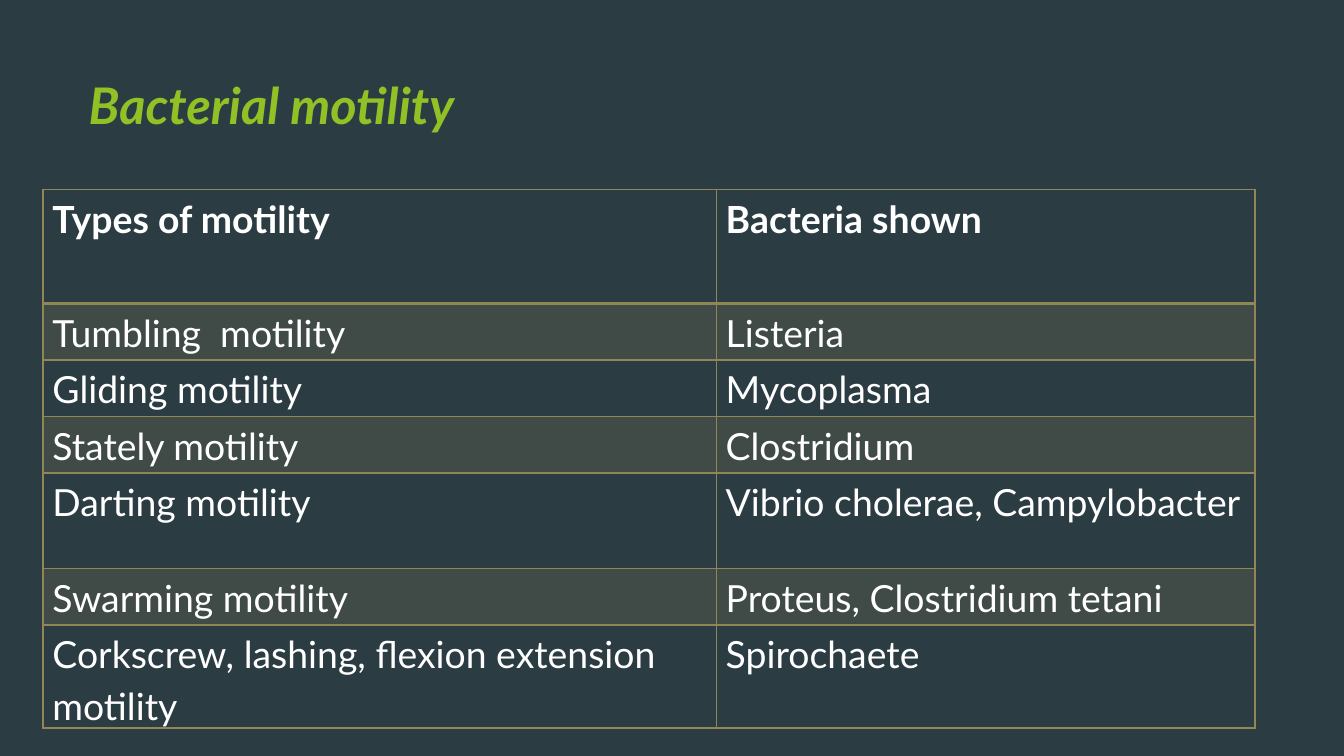
from dataclasses import dataclass

from lxml.etree import SubElement
from pptx import Presentation
from pptx.dml.color import RGBColor
from pptx.enum.text import MSO_ANCHOR, PP_ALIGN
from pptx.oxml import parse_xml
from pptx.oxml.ns import nsdecls, qn
from pptx.util import Inches, Pt

FONT = "Lato"
BACKGROUND, GREEN, WHITE, GOLD = "2C3C43", "90C226", "FFFFFF", "918655"
COLUMN_WIDTHS = (5.01, 4.01)


@dataclass(frozen=True)
class MotilityRow:
    motility: str
    bacteria: str
    height: float = 0.42
    header: bool = False
    shaded: bool = False


ROWS = (
    MotilityRow("Types of motility", "Bacteria shown", 0.85, header=True),
    MotilityRow("Tumbling  motility", "Listeria", shaded=True),
    MotilityRow("Gliding motility", "Mycoplasma"),
    MotilityRow("Stately motility", "Clostridium", shaded=True),
    MotilityRow("Darting motility", "Vibrio cholerae, Campylobacter", 0.71),
    MotilityRow("Swarming motility", "Proteus, Clostridium tetani", shaded=True),
    MotilityRow("Corkscrew, lashing, flexion extension motility", "Spirochaete", 0.71),
)


def color(value: str) -> RGBColor:
    return RGBColor.from_string(value)


def set_font(para, size: float, value: str, bold: bool, italic: bool = False) -> None:
    font = para.font
    font.name, font.size = FONT, Pt(size)
    font.bold, font.italic = bold, italic
    font.color.rgb = color(value)


def fill_cell(cell, shaded: bool) -> None:
    """Give shaded cells a 20 % gold tint and leave the others clear."""
    if not shaded:
        cell.fill.background()
        return
    cell.fill.solid()
    cell.fill.fore_color.rgb = color(GOLD)
    tint = cell._tc.tcPr.find(f"{qn('a:solidFill')}/{qn('a:srgbClr')}")
    SubElement(tint, qn("a:alpha"), val="20000")


def add_borders(cell, top: float, bottom: float) -> None:
    """Insert the four border lines ahead of the fill, as the schema requires."""
    widths = {"lnL": 1, "lnR": 1, "lnT": top, "lnB": bottom}
    for index, (side, width) in enumerate(widths.items()):
        line = parse_xml(
            f'<a:{side} {nsdecls("a")} w="{Pt(width)}"><a:solidFill>'
            f'<a:srgbClr val="{GOLD}"/></a:solidFill></a:{side}>'
        )
        cell._tc.tcPr.insert(index, line)


def write_cell(cell, text: str, header: bool) -> None:
    cell.margin_left = cell.margin_right = Inches(0.07)
    cell.margin_top = cell.margin_bottom = 0
    cell.vertical_anchor = MSO_ANCHOR.TOP
    cell.text = text
    para = cell.text_frame.paragraphs[0]
    para.line_spacing = 1.15
    set_font(para, 20, WHITE, bold=header)


def add_title(page, text: str) -> None:
    title = page.shapes.title
    title.left, title.top = Inches(0.56), Inches(0.5)
    title.width, title.height = Inches(7.05), Inches(1.08)
    title.text = text
    title.text_frame.vertical_anchor = MSO_ANCHOR.TOP
    para = title.text_frame.paragraphs[0]
    para.alignment = PP_ALIGN.LEFT
    set_font(para, 27, GREEN, bold=True, italic=True)


def add_motility_table(page, rows: tuple[MotilityRow, ...]) -> None:
    table = page.shapes.add_table(
        len(rows), len(COLUMN_WIDTHS), Inches(0.32), Inches(1.41),
        Inches(sum(COLUMN_WIDTHS)), Inches(sum(row.height for row in rows)),
    ).table
    table.horz_banding = False
    for column, width in zip(table.columns, COLUMN_WIDTHS):
        column.width = Inches(width)
    for index, row in enumerate(rows):
        table.rows[index].height = Inches(row.height)
        below_header = index > 0 and rows[index - 1].header
        for column, text in enumerate((row.motility, row.bacteria)):
            cell = table.cell(index, column)
            write_cell(cell, text, row.header)
            fill_cell(cell, row.shaded)
            add_borders(cell, 2 if below_header else 1, 2 if row.header else 1)


def main() -> None:
    deck = Presentation()
    deck.slide_width = Inches(10)
    deck.slide_height = deck.slide_width * 9 // 16
    page = deck.slides.add_slide(deck.slide_layouts[5])
    page.background.fill.solid()
    page.background.fill.fore_color.rgb = color(BACKGROUND)
    add_title(page, "Bacterial motility")
    add_motility_table(page, ROWS)
    deck.save("out.pptx")


if __name__ == "__main__":
    main()
